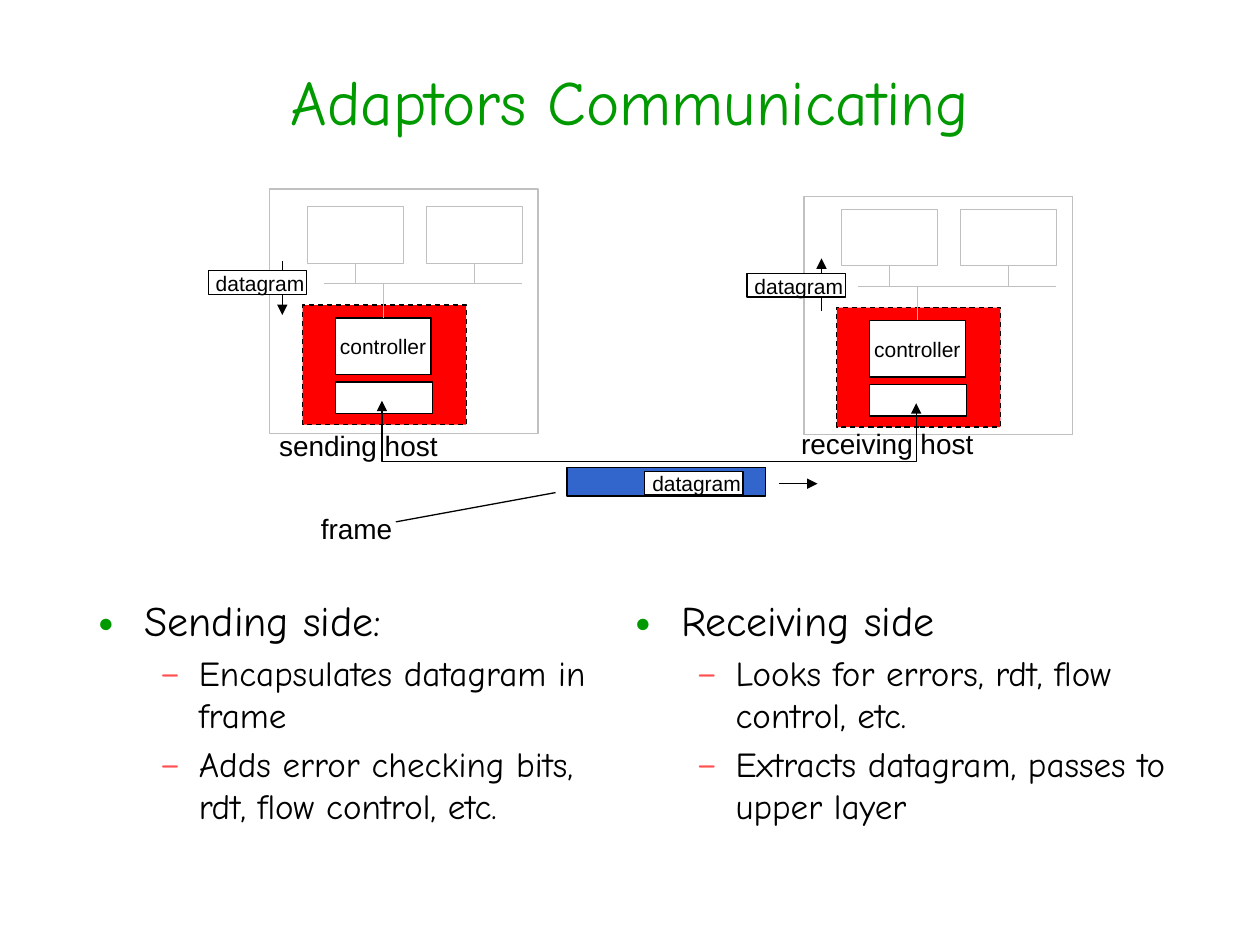
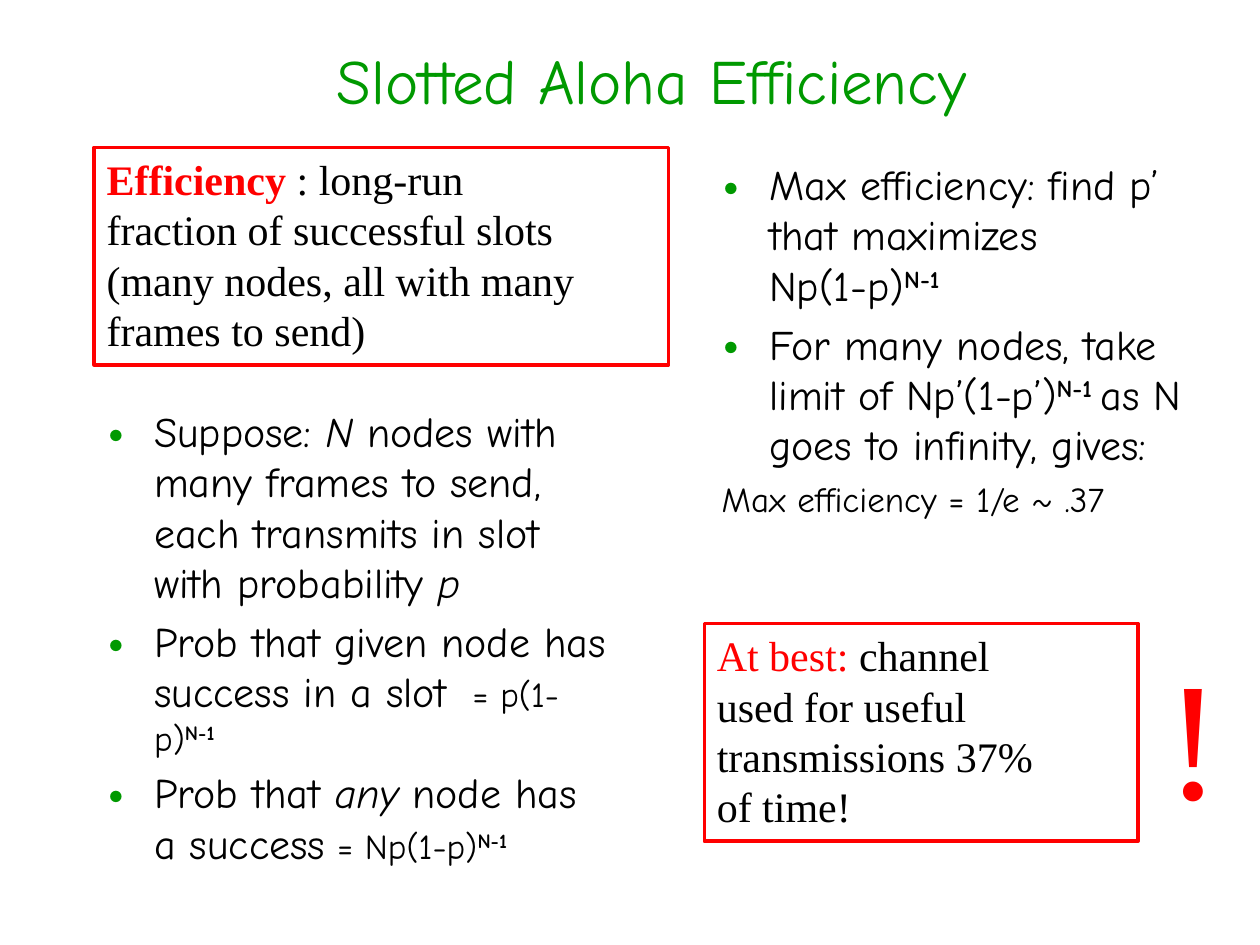
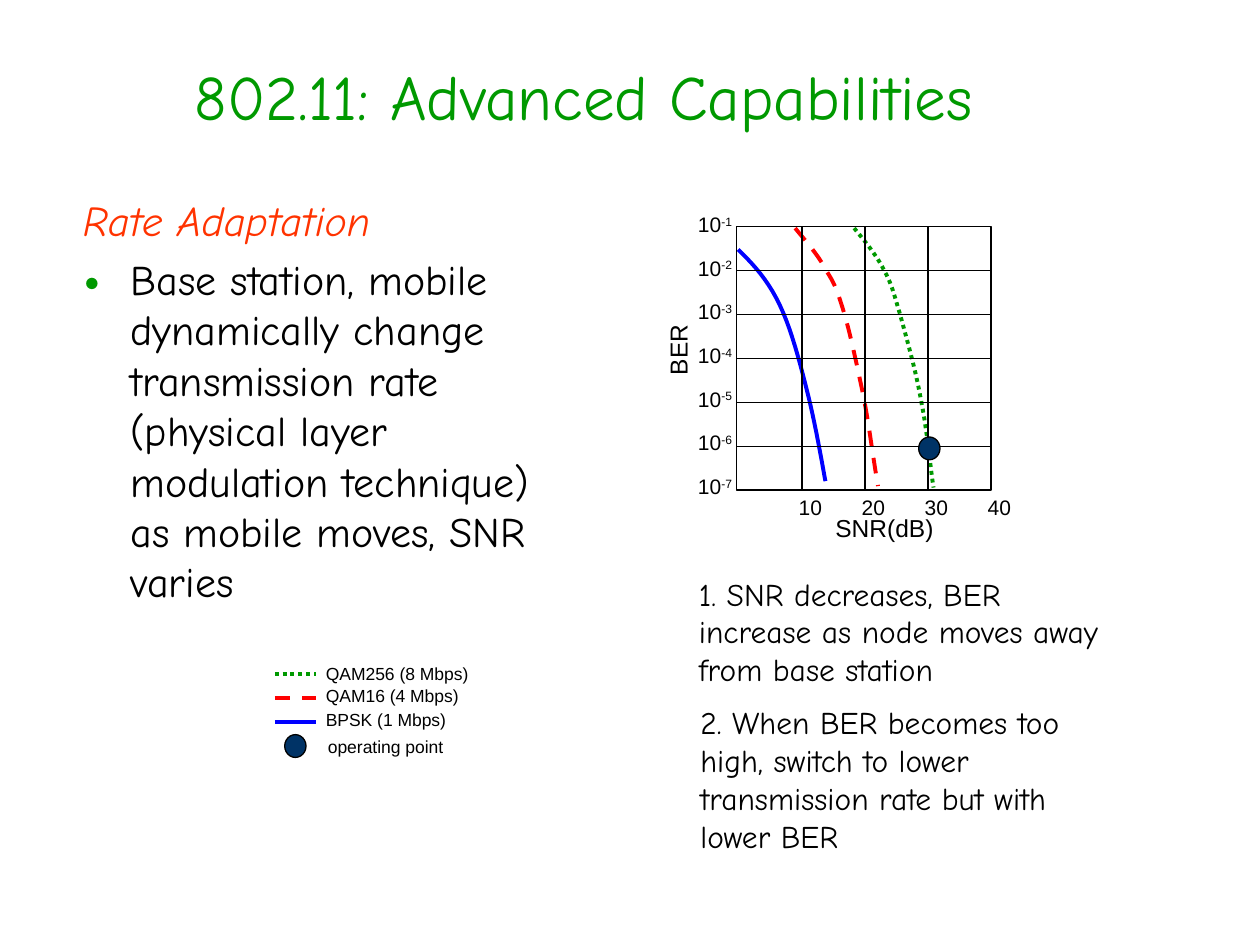
from lxml import etree
from pptx import Presentation
from pptx import util as u
from pptx.dml.color import RGBColor
from pptx.enum import dml, shapes, text
from pptx.oxml import ns

# Colours
BLACK = RGBColor(0x00, 0x00, 0x00)
WHITE = RGBColor(0xFF, 0xFF, 0xFF)
GRAY = RGBColor(0xC0, 0xC0, 0xC0)
GREEN = RGBColor(0x00, 0x99, 0x00)
RED = RGBColor(0xFF, 0x00, 0x00)
CORAL = RGBColor(0xFF, 0x50, 0x50)
ORANGE = RGBColor(0xFF, 0x33, 0x00)
BLUE = RGBColor(0x00, 0x00, 0xFF)
FRAME_BLUE = RGBColor(0x33, 0x66, 0xCC)
NAVY = RGBColor(0x00, 0x33, 0x66)

# Text formats
TITLE = {"name": "Comic Neue", "size": 36, "color": GREEN}
BODY = {"name": "Comic Neue", "size": 24, "color": BLACK}
NOTE = {**BODY, "size": 18}
LABEL = {"name": "Arial", "size": 12, "color": BLACK}
BOXED = {"name": "Times New Roman", "size": 24, "color": BLACK}
ITALIC = {"italic": True}
SMALL = {"size": 20}
POWER = {"bold": True, "raised": True}
SMALL_POWER = {**SMALL, **POWER}

# Paragraph levels: left margin, hanging indent, bullet, its colour and size
LEVELS = {
    "point": {"level": 0, "margin": 0.96, "hang": 0.96,
              "bullet": "•", "color": GREEN, "percent": 150, "size": 24},
    "detail": {"level": 1, "margin": 2.06, "hang": 0.79,
               "bullet": "–", "color": CORAL, "percent": 100, "size": 20},
    "hanging": {"level": 0, "margin": 0.96, "hang": 0.96,
                "bullet": None, "size": 24},
}

DASH = dml.MSO_LINE.DASH
DOTS = dml.MSO_LINE.ROUND_DOT


# Text
def add_element(parent, tag, **attributes):
    element = etree.SubElement(parent, ns.qn(tag))
    for name, value in attributes.items():
        element.set(name, str(value))
    return element


def format_font(font, values):
    for name, value in values.items():
        if name == "color":
            font.color.rgb = value
        elif name == "raised":
            font._element.set("baseline", "30000")
        else:
            setattr(font, name, u.Pt(value) if name == "size" else value)


def format_level(paragraph, level):
    properties = paragraph._p.get_or_add_pPr()
    properties.set("marL", str(u.Cm(level["margin"])))
    properties.set("indent", str(u.Cm(-level["hang"])))
    paragraph.level = level["level"]
    if level["bullet"]:
        colour = add_element(properties, "a:buClr")
        add_element(colour, "a:srgbClr", val=level["color"])
        add_element(properties, "a:buSzPct", val=level["percent"] * 1000)
        add_element(properties, "a:buFont", typeface=BODY["name"])
        add_element(properties, "a:buChar", char=level["bullet"])


def write(shape, paragraphs, style, align=text.PP_ALIGN.LEFT):
    """Fill a shape; a paragraph is (level name or None, [(text, format), ...])."""
    frame = shape.text_frame
    for index, (level_name, runs) in enumerate(paragraphs):
        paragraph = frame.add_paragraph() if index else frame.paragraphs[0]
        paragraph.alignment = align
        base = style
        if level_name:
            level = LEVELS[level_name]
            format_level(paragraph, level)
            base = {**style, "size": level["size"]}
            if index:
                paragraph.space_before = u.Pt(0.2 * level["size"])
        for content, changes in runs:
            for line_index, line in enumerate(content.split("\n")):
                if line_index:
                    paragraph.add_line_break()
                run = paragraph.add_run()
                run.text = line
                format_font(run.font, {**base, **changes})


def plain(content, level=None):
    return level, [(content, {})]


def add_text(slide, box, paragraphs, style, wrap=True, grow=False,
             anchor=text.MSO_ANCHOR.TOP, align=text.PP_ALIGN.LEFT):
    shape = slide.shapes.add_textbox(*map(u.Cm, box))
    settings = {
        "word_wrap": wrap,
        "vertical_anchor": anchor,
        "auto_size": text.MSO_AUTO_SIZE.SHAPE_TO_FIT_TEXT if grow
        else text.MSO_AUTO_SIZE.NONE,
    }
    for name, value in settings.items():
        setattr(shape.text_frame, name, value)
    write(shape, paragraphs, style, align)
    return shape


def add_title(slide, box, content):
    add_text(slide, box, [plain(content)], TITLE,
             anchor=text.MSO_ANCHOR.MIDDLE, align=text.PP_ALIGN.CENTER)


def add_label(slide, box, content, size=12):
    return add_text(slide, box, [plain(content)], {**LABEL, "size": size},
                    wrap=False, grow=True)


# Shapes and lines
def format_line(line, color, width=0.75, dash=None):
    line.color.rgb = color
    line.width = u.Pt(width)
    if dash:
        line.dash_style = dash


def add_arrowheads(shape, *ends):
    for end in ends:
        add_element(shape.line._get_or_add_ln(), f"a:{end}", type="triangle")


def add_box(slide, box, fill=WHITE, line=BLACK, width=0.75, dash=None,
            kind=shapes.MSO_SHAPE.RECTANGLE):
    shape = slide.shapes.add_shape(kind, *map(u.Cm, box))
    shape.shadow.inherit = False
    if fill is None:
        shape.fill.background()
    else:
        shape.fill.solid()
        shape.fill.fore_color.rgb = fill
    format_line(shape.line, line, width, dash)
    return shape


def add_line(slide, start, end, color=BLACK, width=0.75, dash=None, arrow=False):
    connector = slide.shapes.add_connector(
        shapes.MSO_CONNECTOR.STRAIGHT, *map(u.Cm, (*start, *end)))
    format_line(connector.line, color, width, dash)
    if arrow:
        add_arrowheads(connector, "tailEnd")
    add_element(connector._element.spPr, "a:effectLst")
    return connector


def add_path(slide, points, color=BLACK, width=0.75, dash=None):
    corners = [(u.Cm(x), u.Cm(y)) for x, y in points]
    builder = slide.shapes.build_freeform(*corners[0])
    builder.add_line_segments(corners[1:], close=False)
    shape = builder.convert_to_shape()
    shape.shadow.inherit = False
    shape.fill.background()
    format_line(shape.line, color, width, dash)
    return shape


def curve_points(controls, steps=10):
    """Points along joined cubic curves that share their end points."""
    points = [controls[0]]
    for first in range(0, len(controls) - 1, 3):
        a, b, c, d = controls[first:first + 4]
        for step in range(1, steps + 1):
            t = step / steps
            weights = ((1 - t) ** 3, 3 * t * (1 - t) ** 2, 3 * t * t * (1 - t), t ** 3)
            points.append(tuple(
                sum(weight * point[axis] for weight, point in zip(weights, (a, b, c, d)))
                for axis in (0, 1)))
    return points


def add_dot(slide, left, top):
    add_box(slide, (left, top, 0.43, 0.46), NAVY, kind=shapes.MSO_SHAPE.OVAL)


def add_red_box(slide, box, paragraphs):
    shape = add_box(slide, box, None, RED, 2)
    shape.text_frame.word_wrap = True
    shape.text_frame.auto_size = text.MSO_AUTO_SIZE.SHAPE_TO_FIT_TEXT
    shape.text_frame.vertical_anchor = text.MSO_ANCHOR.TOP
    write(shape, paragraphs, BOXED)


# Slide 1 parts
def add_host(slide, left, top, height, inner_top):
    add_box(slide, (left, top, 5.41, height), line=GRAY)
    add_box(slide, (left + 0.66, inner_top + 1.98, 3.3, 2.41), RED, dash=DASH)
    add_box(slide, (left + 1.32, inner_top + 3.53, 1.96, 0.64))
    controller = add_box(slide, (left + 1.32, inner_top + 2.24, 1.93, 1.14))
    controller.text_frame.word_wrap = False
    controller.text_frame.vertical_anchor = text.MSO_ANCHOR.MIDDLE
    write(controller, [plain("controller")], LABEL, text.PP_ALIGN.CENTER)

    # Bus with its three taps
    bus = inner_top + 1.55
    add_line(slide, (left + 1.09, bus), (left + 5.08, bus), GRAY)
    middle = left + 1.32 + 1.93 / 2
    tap = add_line(slide, (middle, bus), (middle, inner_top + 2.24), GRAY)
    tap.end_connect(controller, 0)
    for offset in (0.76, 3.16):
        unit = add_box(slide, (left + offset, inner_top, 1.93, 1.14), line=GRAY)
        middle = left + offset + 1.93 / 2
        tap = add_line(slide, (middle, bus), (middle, inner_top + 1.14), GRAY)
        tap.end_connect(unit, 2)


def add_datagram(slide, left, top):
    add_box(slide, (left, top, 1.98, 0.48))
    add_label(slide, (left - 0.1, top - 0.13, 2.3, 0.76), "datagram")


def build_adaptors(slide):
    add_title(slide, (1.9, 0.43, 21.59, 3.18), "Adaptors Communicating")
    add_text(slide, (1.7, 11.86, 11.3, 5.38), [
        plain("Sending side:", "point"),
        plain("Encapsulates datagram in frame", "detail"),
        plain("Adds error checking bits, rdt, flow control, etc.", "detail"),
    ], BODY)
    add_text(slide, (12.52, 11.86, 12.04, 5.13), [
        plain("Receiving side", "point"),
        plain("Looks for errors, rdt, flow control, etc.", "detail"),
        plain("Extracts datagram, passes to upper layer", "detail"),
    ], BODY)

    # Hosts
    add_host(slide, 5.44, 3.81, 4.93, 4.17)
    add_host(slide, 16.21, 3.96, 4.8, 4.22)
    add_label(slide, (5.38, 8.51, 3.71, 0.94), "sending host", 16)
    add_label(slide, (15.9, 8.48, 4, 0.94), "receiving host", 16)
    add_line(slide, (5.69, 5.26), (5.69, 6.35), arrow=True)
    add_datagram(slide, 4.2, 5.46)
    add_line(slide, (16.56, 6.27), (16.56, 5.21), arrow=True)
    add_datagram(slide, 15.06, 5.51)

    # Link and frame
    link = add_path(slide, [(7.7, 8.08), (7.7, 9.3), (18.47, 9.3), (18.47, 8.13)])
    add_arrowheads(link, "headEnd", "tailEnd")
    add_box(slide, (11.43, 9.42, 4.01, 0.58), FRAME_BLUE)
    add_datagram(slide, 13, 9.5)
    add_line(slide, (15.7, 9.75), (16.48, 9.75), arrow=True)
    add_label(slide, (6.22, 10.19, 1.97, 0.94), "frame", 16)
    add_line(slide, (7.98, 10.52), (11.2, 9.93))


# Slide 2
def build_efficiency(slide):
    add_title(slide, (2.34, 0, 21.59, 3.18), "Slotted Aloha Efficiency")
    add_text(slide, (1.9, 8.05, 10.59, 8.69), [
        ("point", [
            ("Suppose: ", {}), ("N", ITALIC),
            (" nodes with many frames to send, each transmits in slot"
             " with probability ", {}),
            ("p", ITALIC)]),
        ("point", [
            ("Prob that given node has success in a slot ", {}),
            (" = p(1-p)", SMALL), ("N-1", SMALL_POWER)]),
        ("point", [
            ("Prob that ", {}), ("any", ITALIC), (" node has a success", {}),
            (" = Np(1-p)", SMALL), ("N-1", SMALL_POWER)]),
    ], BODY)
    add_text(slide, (14.3, 3.07, 10.59, 8.99), [
        ("point", [
            ("Max efficiency: find p’ that maximizes \nNp(1-p)", {}),
            ("N-1", POWER)]),
        ("point", [
            ("For many nodes, take limit of Np’(1-p’)", {}), ("N-1 ", POWER),
            ("as N goes to infinity, gives:", {})]),
        ("hanging", [("Max efficiency = 1/e ~ .37", SMALL)]),
    ], BODY)

    # Definition and result
    add_red_box(slide, (1.9, 2.97, 11.58, 4.39), [
        (None, [
            ("Efficiency", {"color": RED, "bold": True}),
            (" : long-run \nfraction of successful slots \n"
             "(many nodes, all with many frames to send)", {})]),
    ])
    add_red_box(slide, (14.2, 12.57, 8.74, 4.39), [
        (None, [("At best:", {"color": RED}), (" channel", {})]),
        plain("used for useful"),
        plain("transmissions 37%"),
        plain("of time!"),
    ])
    add_text(slide, (23.24, 12.6, 1.32, 4.32), [plain("!")],
             {**BOXED, "size": 96, "color": RED}, wrap=False, grow=True)


# Slide 3 parts
BPSK_CURVE = [
    (14.88, 5.03), (15.19, 5.33), (15.49, 5.66), (15.72, 6.15), (15.95, 6.63),
    (16.13, 7.32), (16.28, 7.92), (16.43, 8.51), (16.59, 9.42), (16.64, 9.7)]
QAM16_CURVE = [
    (16.03, 4.6), (16.26, 4.88), (16.51, 5.16), (16.66, 5.46), (16.84, 5.74),
    (16.89, 5.89), (17.02, 6.32), (17.15, 6.76), (17.3, 7.47), (17.42, 8.05),
    (17.53, 8.64), (17.6, 9.22), (17.7, 9.8)]
QAM256_CURVE = [
    (17.22, 4.6), (17.45, 4.88), (17.68, 5.16), (17.83, 5.46), (17.98, 5.74),
    (18.01, 5.89), (18.14, 6.32), (18.26, 6.76), (18.47, 7.49), (18.57, 8.08),
    (18.69, 8.66), (18.77, 9.55), (18.82, 9.83)]

# Curve, colour, dash, name, name top, name width
MODULATIONS = [
    (QAM256_CURVE, GREEN, DOTS, "QAM256 (8 Mbps)", 13.25, 3.45),
    (QAM16_CURVE, RED, DASH, "QAM16 (4 Mbps)", 13.68, 3.25),
    (BPSK_CURVE, BLUE, None, "BPSK (1 Mbps)", 14.17, 3),
]


def add_error_plot(slide):
    left, top, width, height = 14.85, 4.57, 5.13, 5.31
    right, bottom = left + width, top + height
    for controls, color, dash, *_ in MODULATIONS:
        add_path(slide, curve_points(controls), color, 2.25, dash)
    plot = add_box(slide, (left, top, width, height), None)

    # Grid
    for row in range(1, 6):
        y = top + row * height / 6
        line = add_line(slide, (left, y), (right, y))
        if row == 3:
            line.begin_connect(plot, 1)
            line.end_connect(plot, 3)
    for column in range(1, 4):
        x = right - column * 1.27
        add_line(slide, (x, top), (x, bottom))

    # Axis labels
    for index in range(4):
        add_label(slide, (15.85 + index * 1.27, 9.84, 1, 0.76), str(10 * (index + 1)))
    for index in range(7):
        power = (None, [("10", {}), (f"-{index + 1}", {"raised": True})])
        add_text(slide, (13.82, 4.14 + index * 0.88, 1.23, 0.76), [power], LABEL,
                 wrap=False, grow=True)
    add_label(slide, (16.59, 10.21, 2.5, 0.84), "SNR(dB)", 14)
    add_label(slide, (12.9, 6.63, 1.53, 0.84), "BER", 14).rotation = 270
    add_dot(slide, 18.52, 8.81)


def add_legend(slide):
    for index, (_, color, dash, name, top, width) in enumerate(MODULATIONS):
        y = 13.59 + index * 0.48
        add_line(slide, (5.54, y), (6.38, y), color, 2.25, dash)
        add_label(slide, (6.32, top, width, 0.69), name, 10)
    add_dot(slide, 5.74, 14.81)
    add_label(slide, (6.36, 14.71, 2.9, 0.69), "operating point", 10)


def build_capabilities(slide):
    add_title(slide, (0.97, 0.76, 21.59, 2.34), "802.11: Advanced Capabilities")
    add_text(slide, (1.42, 3.8, 10.41, 12.9), [
        ("hanging", [("Rate Adaptation", {"color": ORANGE, **ITALIC})]),
        plain("Base station, mobile dynamically change transmission rate"
              " (physical layer modulation technique) as mobile moves, SNR varies",
              "point"),
    ], BODY)
    add_legend(slide)
    add_error_plot(slide)
    add_text(slide, (13.84, 11.46, 8.89, 2.57), [
        plain("1. SNR decreases, BER increase as node moves away from base station"),
    ], NOTE, grow=True)
    add_text(slide, (13.87, 14.05, 8.89, 3.33), [
        plain("2. When BER becomes too high, switch to lower transmission rate"
              " but with lower BER"),
    ], NOTE, grow=True)


def main():
    presentation = Presentation()
    presentation.slide_width = u.Cm(25.4)
    presentation.slide_height = u.Cm(19.05)
    for build in (build_adaptors, build_efficiency, build_capabilities):
        build(presentation.slides.add_slide(presentation.slide_layouts[6]))
    presentation.save("out.pptx")


if __name__ == "__main__":
    main()
